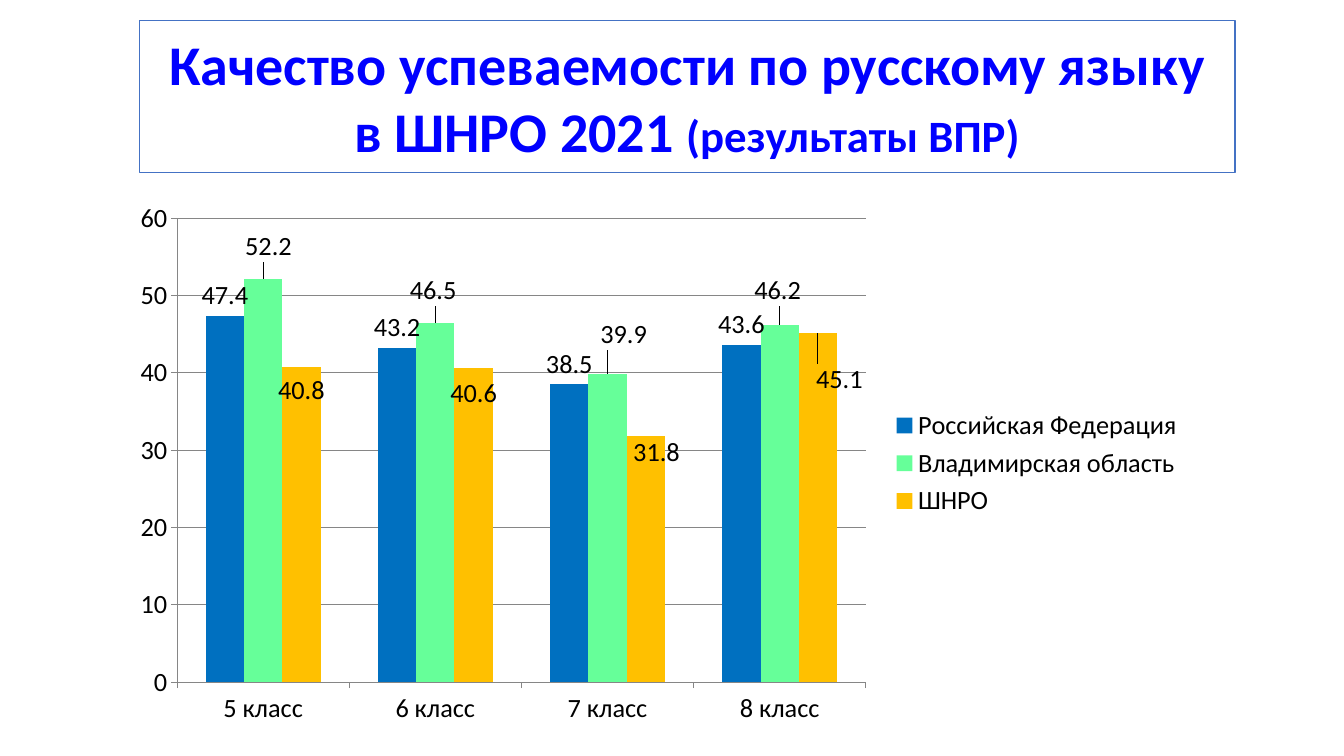
from dataclasses import dataclass

from lxml import etree
from pptx import Presentation
from pptx.chart.chart import Chart
from pptx.chart.data import CategoryChartData
from pptx.chart.series import BarSeries
from pptx.dml.color import RGBColor
from pptx.enum.chart import XL_CHART_TYPE, XL_LABEL_POSITION, XL_LEGEND_POSITION, XL_TICK_MARK
from pptx.enum.text import MSO_ANCHOR, MSO_AUTO_SIZE, PP_ALIGN
from pptx.oxml.ns import qn
from pptx.shapes.placeholder import SlidePlaceholder
from pptx.slide import Slide
from pptx.util import Cm, Pt

COLUMN = XL_CHART_TYPE.COLUMN_CLUSTERED
ABOVE = XL_LABEL_POSITION.OUTSIDE_END
RIGHT = XL_LEGEND_POSITION.RIGHT
OUTSIDE = XL_TICK_MARK.OUTSIDE
MIDDLE = MSO_ANCHOR.MIDDLE
CENTER = PP_ALIGN.CENTER
NO_FIT = MSO_AUTO_SIZE.NONE

FONT = "Calibri"
COLORS = {
    "white": "FFFFFF",
    "black": "000000",
    "title": "0000FF",
    "frame": "4472C4",
    "grid": "868686",
    "country": "0070C0",
    "region": "66FF99",
    "school": "FFC000",
}


@dataclass(frozen=True)
class Group:
    name: str
    color: str
    scores: tuple[float, ...]
    shifts: tuple[tuple[float, float], ...] = ()


GRADES = [f"{grade} класс" for grade in range(5, 9)]
GROUPS = [
    Group("Российская Федерация", "country", (47.4, 43.2, 38.5, 43.6)),
    Group("Владимирская область", "region", (52.2, 46.5, 39.9, 46.2),
          ((0.5, -2.2), (-0.2, -2.2), (1.5, -3.5), (-0.2, -2.6))),
    Group("ШНРО", "school", (40.8, 40.6, 31.8, 45.1),
          ((0, 8.1), (0, 8.3), (1, 6.8), (2, 12.3))),
]


def color(key: str) -> RGBColor:
    return RGBColor.from_string(COLORS[key])


def set_layout(parent: etree._Element, place: int, parts: dict[str, str | float]) -> None:
    for old in parent.findall(qn("c:layout")):
        parent.remove(old)
    layout = etree.Element(qn("c:layout"))
    manual = etree.SubElement(layout, qn("c:manualLayout"))
    for tag, part in parts.items():
        value = part if isinstance(part, str) else f"{part / 100:.3f}"
        etree.SubElement(manual, qn(f"c:{tag}")).set("val", value)
    parent.insert(place, layout)


def draw_title(title: SlidePlaceholder) -> None:
    title.left, title.top = Cm(3.51), Cm(0.51)
    title.width, title.height = Cm(27.61), Cm(3.84)
    shape = etree.SubElement(title._element.spPr, qn("a:prstGeom"), prst="roundRect")
    etree.SubElement(shape, qn("a:avLst"))
    title.fill.solid()
    title.fill.fore_color.rgb = color("white")
    title.line.color.rgb = color("frame")
    title.line.width = Pt(1)
    frame = title.text_frame
    frame.word_wrap = True
    frame.auto_size = NO_FIT
    frame.vertical_anchor = MIDDLE
    line = frame.paragraphs[0]
    line.alignment = CENTER
    for text, size in (("Качество успеваемости по русскому языку в ШНРО 2021 ", 40),
                       ("(результаты ВПР)", 32)):
        run = line.add_run()
        run.text = text
        run.font.name = FONT
        run.font.size = Pt(size)
        run.font.bold = True
        run.font.color.rgb = color("title")


def style_axes(chart: Chart) -> None:
    scores = chart.value_axis
    scores.minimum_scale, scores.maximum_scale, scores.major_unit = 0, 60, 10
    scores.has_major_gridlines = True
    for axis in (chart.category_axis, scores):
        axis.major_tick_mark = OUTSIDE
        axis.format.line.color.rgb = color("grid")
        axis.format.line.width = Pt(0.75)
    grid = scores.major_gridlines.format.line
    grid.color.rgb = color("grid")
    grid.width = Pt(0.75)


def style_bars(bars: BarSeries, group: Group) -> None:
    bars.format.fill.solid()
    bars.format.fill.fore_color.rgb = color(group.color)
    labels = bars.data_labels
    labels.show_value = True
    labels.position = ABOVE
    for index in range(len(group.shifts)):
        bars.points[index].data_label.position = ABOVE
    for label, (across, down) in zip(labels._element.findall(qn("c:dLbl")), group.shifts):
        set_layout(label, 1, {"x": across, "y": down})


def draw_chart(slide: Slide) -> None:
    data = CategoryChartData()
    data.categories = GRADES
    for group in GROUPS:
        data.add_series(group.name, group.scores)
    chart = slide.shapes.add_chart(COLUMN, Cm(3), Cm(4.83), Cm(27.08), Cm(13.69), data).chart
    chart.has_title = False
    chart.font.name = FONT
    chart.font.size = Pt(18.8)
    chart.font.color.rgb = color("black")
    chart.has_legend = True
    chart.legend.position = RIGHT
    chart.legend.include_in_layout = False
    style_axes(chart)
    plot = chart.plots[0]
    plot.gap_width = 150
    plot.overlap = 0
    plot.vary_by_categories = False
    for bars, group in zip(plot.series, GROUPS):
        style_bars(bars, group)
    area = chart._chartSpace.find(".//" + qn("c:plotArea"))
    set_layout(area, 0, {"layoutTarget": "inner", "xMode": "edge", "yMode": "edge",
                         "x": 5.4, "y": 4.9, "w": 64.1, "h": 85.4})


def main() -> None:
    deck = Presentation()
    deck.slide_width, deck.slide_height = Cm(33.87), Cm(19.05)
    slide = deck.slides.add_slide(deck.slide_layouts[5])
    draw_title(slide.shapes.title)
    draw_chart(slide)
    deck.save("out.pptx")


if __name__ == "__main__":
    main()
